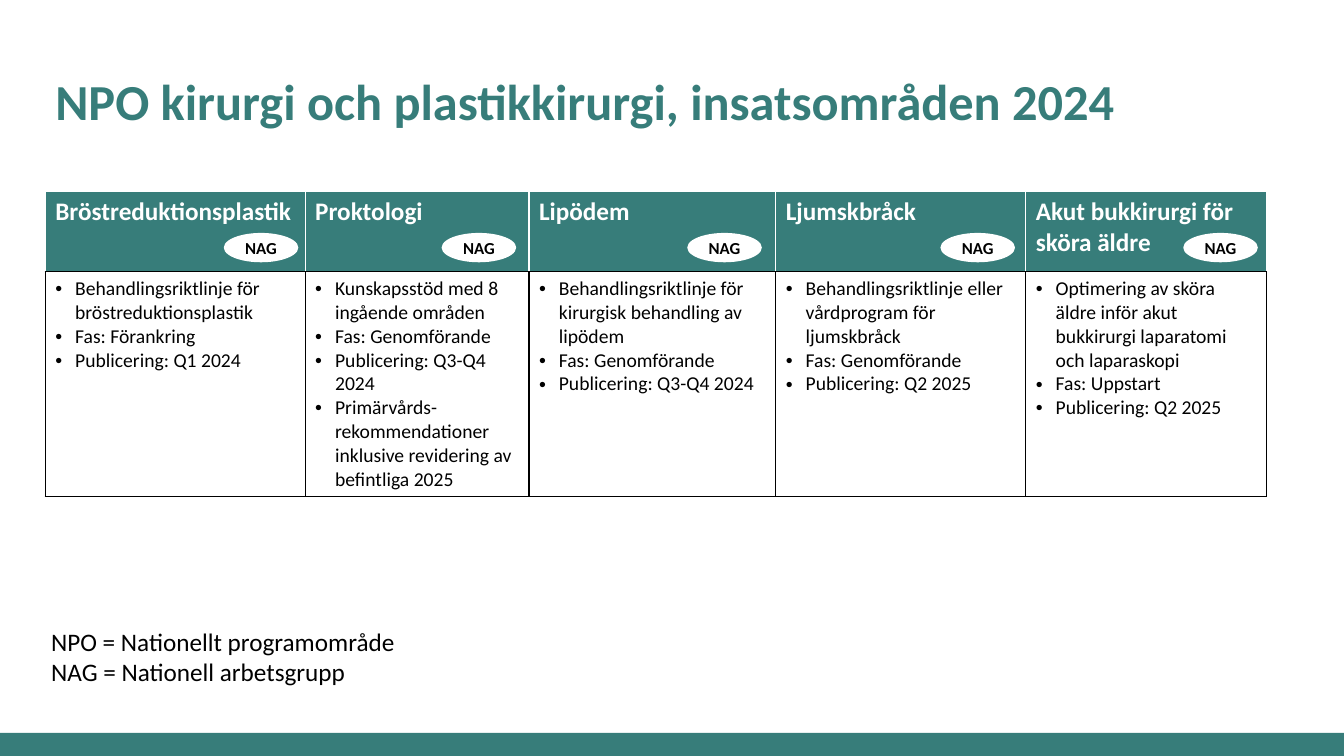
from lxml.etree import SubElement
from pptx import Presentation
from pptx.dml.color import RGBColor
from pptx.enum.shapes import MSO_SHAPE
from pptx.enum.text import MSO_ANCHOR, MSO_AUTO_SIZE, PP_ALIGN
from pptx.oxml.ns import qn
from pptx.util import Cm, Pt

TEAL = RGBColor(0x37, 0x7D, 0x7A)
WHITE = RGBColor(0xFF, 0xFF, 0xFF)
BLACK = RGBColor(0, 0, 0)
FONT = "Calibri"

SLIDE_WIDTH, SLIDE_HEIGHT = Cm(33.87), Cm(19.05)
BAR_HEIGHT = Cm(0.58)
TABLE_LEFT, TABLE_TOP = Cm(1.14), Cm(4.83)
ROW_HEIGHTS = (Cm(2.02), Cm(5.66))
BULLET_INDENT = Cm(0.5)

# Heading, column width in cm, left edge of the NAG badge in cm, bullets
AREAS = [
    ("Bröstreduktionsplastik", 6.55, 5.64,
     "Behandlingsriktlinje för bröstreduktionsplastik\n"
     "Fas: Förankring\n"
     "Publicering: Q1 2024"),
    ("Proktologi", 5.64, 11.13,
     "Kunskapsstöd med 8 ingående områden\n"
     "Fas: Genomförande\n"
     "Publicering: Q3-Q4 2024\n"
     "Primärvårds-rekommendationer inklusive revidering av befintliga 2025"),
    ("Lipödem", 6.22, 17.32,
     "Behandlingsriktlinje för kirurgisk behandling av lipödem\n"
     "Fas: Genomförande\n"
     "Publicering: Q3-Q4 2024"),
    ("Ljumskbråck", 6.3, 23.7,
     "Behandlingsriktlinje eller vårdprogram för ljumskbråck\n"
     "Fas: Genomförande\n"
     "Publicering: Q2 2025"),
    ("Akut bukkirurgi för sköra äldre", 6.07, 29.82,
     "Optimering av sköra äldre inför akut bukkirurgi laparatomi och laparaskopi\n"
     "Fas: Uppstart\n"
     "Publicering: Q2 2025"),
]


def add_bullet(paragraph):
    properties = paragraph._p.get_or_add_pPr()
    properties.set("marL", str(BULLET_INDENT))
    properties.set("indent", str(-BULLET_INDENT))
    SubElement(properties, qn("a:buFont")).set("typeface", "Arial")
    SubElement(properties, qn("a:buChar")).set("char", "•")


def write_text(text_frame, text, *, size, color=BLACK, bold=False,
               align=PP_ALIGN.LEFT, line_spacing=None, bullets=False):
    """Write each line of the text as a paragraph of its own."""
    for index, line in enumerate(text.split("\n")):
        paragraph = text_frame.add_paragraph() if index else text_frame.paragraphs[0]
        if bullets:
            add_bullet(paragraph)
        paragraph.alignment = align
        paragraph.line_spacing = line_spacing
        run = paragraph.add_run()
        run.text = line
        run.font.name = FONT
        run.font.size = Pt(size)
        run.font.bold = bold
        run.font.color.rgb = color


def add_text_box(slide, left, top, width, height, text, **text_format):
    text_frame = slide.shapes.add_textbox(left, top, width, height).text_frame
    text_frame.word_wrap = False
    write_text(text_frame, text, **text_format)


def add_plain_shape(slide, kind, left, top, width, height, color):
    shape = slide.shapes.add_shape(kind, left, top, width, height)
    shape.shadow.inherit = False
    shape.fill.solid()
    shape.fill.fore_color.rgb = color
    shape.line.fill.background()
    return shape


def add_badge(slide, left):
    badge = add_plain_shape(slide, MSO_SHAPE.OVAL, left, Cm(5.87),
                            Cm(1.88), Cm(0.74), WHITE)
    text_frame = badge.text_frame
    text_frame.word_wrap = False
    text_frame.vertical_anchor = MSO_ANCHOR.MIDDLE
    write_text(text_frame, "NAG", size=12, bold=True, align=PP_ALIGN.CENTER)


def set_borders(cell, **colors):
    """Draw one-point borders; the sides are named L, R, T and B."""
    properties = cell._tc.get_or_add_tcPr()
    for side, color in colors.items():
        line = SubElement(properties, qn(f"a:ln{side}"), w=str(Pt(1)))
        fill = SubElement(line, qn("a:solidFill"))
        SubElement(fill, qn("a:srgbClr")).set("val", str(color))


def add_area_table(slide):
    widths = [Cm(width) for _, width, _, _ in AREAS]
    table = slide.shapes.add_table(2, len(AREAS), TABLE_LEFT, TABLE_TOP,
                                   sum(widths), sum(ROW_HEIGHTS)).table
    table.first_row = False
    table.horz_banding = False
    for row, height in zip(table.rows, ROW_HEIGHTS):
        row.height = height
    for index, (heading, _, _, bullets) in enumerate(AREAS):
        table.columns[index].width = widths[index]
        header, body = table.cell(0, index), table.cell(1, index)
        set_borders(header, L=WHITE, R=WHITE, T=WHITE, B=BLACK)
        header.fill.solid()
        header.fill.fore_color.rgb = TEAL
        write_text(header.text_frame, heading, size=18, color=WHITE, bold=True)
        set_borders(body, L=BLACK, R=BLACK, T=BLACK, B=BLACK)
        body.fill.background()
        write_text(body.text_frame, bullets, size=14, bullets=True)


def set_title(slide, text):
    title = slide.shapes.title
    title.left, title.top = Cm(1.14), Cm(1.65)
    title.width, title.height = Cm(29.29), Cm(1.78)
    title.text_frame.auto_size = MSO_AUTO_SIZE.NONE
    title.text_frame.vertical_anchor = MSO_ANCHOR.BOTTOM
    write_text(title.text_frame, text, size=36, color=TEAL, bold=True,
               line_spacing=0.9)


def main():
    presentation = Presentation()
    presentation.slide_width = SLIDE_WIDTH
    presentation.slide_height = SLIDE_HEIGHT
    slide = presentation.slides.add_slide(presentation.slide_layouts[5])

    add_plain_shape(slide, MSO_SHAPE.RECTANGLE, 0, SLIDE_HEIGHT - BAR_HEIGHT,
                    SLIDE_WIDTH, BAR_HEIGHT, TEAL)
    set_title(slide, "NPO kirurgi och plastikkirurgi, insatsområden 2024")
    add_area_table(slide)
    for _, _, badge_left, _ in AREAS:
        add_badge(slide, Cm(badge_left))
    add_text_box(slide, Cm(1.04), Cm(15.65), Cm(9.27), Cm(1.8),
                 "NPO = Nationellt programområde\nNAG = Nationell arbetsgrupp",
                 size=18)
    presentation.save("out.pptx")


if __name__ == "__main__":
    main()
